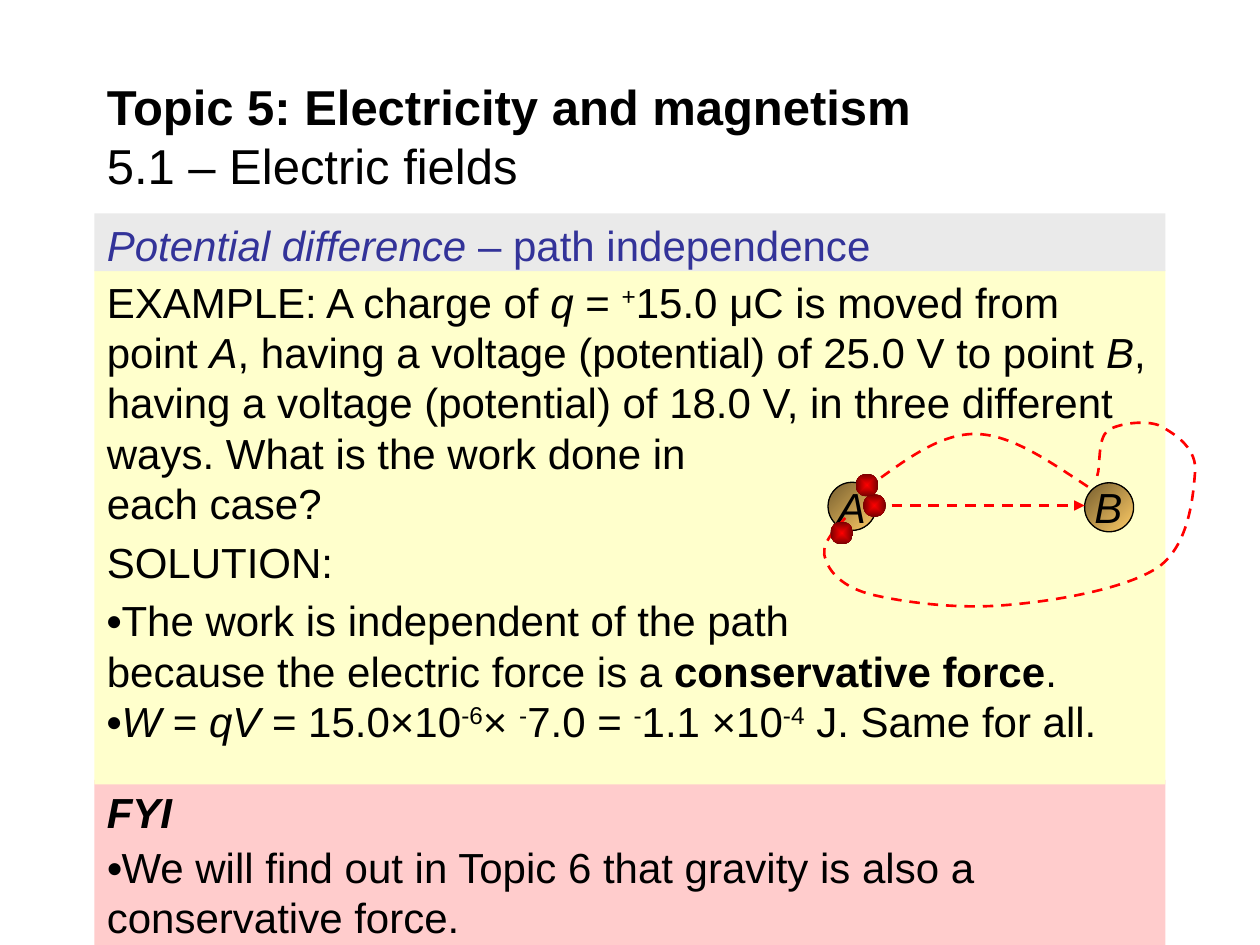
from lxml.etree import SubElement
from pptx import Presentation
from pptx.dml.color import RGBColor
from pptx.enum.dml import MSO_LINE
from pptx.enum.shapes import MSO_CONNECTOR, MSO_SHAPE
from pptx.enum.text import MSO_ANCHOR, PP_ALIGN
from pptx.oxml.ns import qn
from pptx.util import Pt

COLORS = {
    "text": "000000", "heading": "333399", "band": "EAEAEA",
    "example": "FFFFCC", "fyi": "FFCCCC", "path": "FF0000",
    "point_dark": "765E2F", "point_light": "FFCC66", "charge_dark": "760000",
}

# Run marks: b = bold, i = italic, ^ = superscript
TITLE = [[("Topic 5: Electricity and magnetism\n", "b"), ("5.1 – Electric fields", "")]]
HEADING = [[("Potential difference ", "i"), ("– path independence", "")]]
EXAMPLE = [
    [("EXAMPLE: A charge of ", ""), ("q", "i"), (" = ", ""), ("+", "^"),
     ("15.0 μC is moved from point ", ""), ("A", "i"),
     (", having a voltage (potential) of 25.0 V to point ", ""), ("B", "i"),
     (", having a voltage (potential) of 18.0 V, in three different ways. "
      "What is the work done in\neach case?", "")],
    [("SOLUTION:", "")],
    [("•", "b"), ("The work is independent of the path\nbecause the electric force is a ", ""),
     ("conservative force", "b"), (".", "")],
    [("•", "b"), ("W", "i"), (" = ", ""), ("qV", "i"), (" = 15.0×10", ""), ("-6", "^"),
     ("× ", ""), ("-", "^"), ("7.0 = ", ""), ("-", "^"), ("1.1 ×10", ""), ("-4", "^"),
     (" J. Same for all.", "")],
]
FYI = [
    [("FYI", "bi")],
    [("•", "bi"), ("We will find out in Topic 6 that gravity is also a conservative force.", "")],
]

LEFT, WIDTH = 54, 612
# top, height, fill, text colour, paragraphs, space before each paragraph
PANELS = [
    (445.7, 94.3, "fyi", "text", FYI, (2.4, 2.6)),
    (154.3, 294, "example", "text", EXAMPLE, (4.6, 4.6, 4.6, 0)),
    (122, 33, "band", "heading", HEADING, (0,)),
]
# label, left, top, diameter
POINTS = [("A", 473.2, 275.6, 27.5), ("B", 619.8, 275.9, 28)]
LABEL_SIZE = (30, 36)
CHARGE_DIAMETER = 13
STRAIGHT_PATH = [(499, 288.9), (619.8, 288.9)]
# Start point, then two control points and an end point per curve
UPPER_PATH = [(494.6, 278.6),
              (515.5, 263.5), (535.7, 248.2), (557.3, 248.2),
              (578.2, 248.2), (600.5, 263.5), (622.8, 279.4)]
LOOP_PATH = [(483, 296),
             (476, 304.5), (468.5, 312.5), (471.5, 320),
             (474.5, 327), (482.5, 335.5), (499, 340),
             (515.5, 344), (545, 348.5), (572.5, 346),
             (600, 343.5), (643, 337), (661.5, 324),
             (679.5, 311), (682.5, 281.5), (683.3, 268),
             (683.3, 255), (670.3, 247), (662.4, 243.4),
             (653.8, 239.8), (638.6, 242), (633, 246.2),
             (627, 251.3), (628.6, 266.4), (627, 272.2)]
UPPER_CHARGE, MIDDLE_CHARGE, LOWER_CHARGE = (495.4, 277.2), (499.7, 288.9), (481, 304.6)


def rgb(name):
    return RGBColor.from_string(COLORS[name])


def write(shape, paragraphs, size, color, spaces=(0,), wrap=True, **layout):
    frame = shape.text_frame
    settings = {"word_wrap": wrap, "vertical_anchor": MSO_ANCHOR.TOP, **layout}
    for name, value in settings.items():
        setattr(frame, name, value)
    for number, (runs, space) in enumerate(zip(paragraphs, spaces)):
        paragraph = frame.add_paragraph() if number else frame.paragraphs[0]
        paragraph.alignment = PP_ALIGN.LEFT
        paragraph.space_before = Pt(space)
        for text, marks in runs:
            for part, line in enumerate(text.split("\n")):
                if part:
                    paragraph.add_line_break()
                if not line:
                    continue
                font_format = {"name": "Arial", "size": Pt(size),
                               "bold": "b" in marks, "italic": "i" in marks}
                run = paragraph.add_run()
                run.text = line
                for name, value in font_format.items():
                    setattr(run.font, name, value)
                run.font.color.rgb = rgb(color)
                if "^" in marks:
                    run.font._element.set("baseline", "30000")


def add_shape(parent, kind, left, top, width, height):
    shape = parent.shapes.add_shape(kind, Pt(left), Pt(top), Pt(width), Pt(height))
    shape.shadow.inherit = False
    shape.line.fill.background()
    return shape


def add_text_box(parent, left, top, width, height):
    return parent.shapes.add_textbox(Pt(left), Pt(top), Pt(width), Pt(height))


def fill_gradient(shape, *colors):
    shape.fill.gradient()
    for position, (stop, color) in enumerate(zip(shape.fill.gradient_stops, colors)):
        stop.color.rgb = rgb(color)
        stop.position = position


def style_path(line):
    line.color.rgb = rgb("path")
    line.width = Pt(1.5)
    line.dash_style = MSO_LINE.DASH


def add_curve(slide, points):
    """Draw a chain of cubic Bézier curves as a dashed outline."""
    builder = slide.shapes.build_freeform(*points[0], scale=float(Pt(1)))
    builder.add_line_segments(points[1:], close=False)
    curve = builder.convert_to_shape()
    outline = next(curve._element.iter(qn("a:path")))
    segments = outline.findall(qn("a:lnTo"))
    for first in range(0, len(segments), 3):
        bezier = SubElement(outline, qn("a:cubicBezTo"))
        for segment in segments[first:first + 3]:
            bezier.append(segment[0])
            outline.remove(segment)
    curve.shadow.inherit = False
    curve.fill.background()
    style_path(curve.line)


def add_arrow(slide, start, end):
    arrow = slide.shapes.add_connector(MSO_CONNECTOR.STRAIGHT, *map(Pt, start + end))
    style_path(arrow.line)
    SubElement(arrow.line._get_or_add_ln(), qn("a:tailEnd"), type="triangle")
    SubElement(arrow._element.spPr, qn("a:effectLst"))


def add_charge(slide, center):
    left, top = (value - CHARGE_DIAMETER / 2 for value in center)
    charge = add_shape(slide, MSO_SHAPE.OVAL, left, top, CHARGE_DIAMETER, CHARGE_DIAMETER)
    fill_gradient(charge, "path", "charge_dark")
    gradient = charge._element.spPr.find(qn("a:gradFill"))
    gradient.remove(gradient.find(qn("a:lin")))
    radial = SubElement(gradient, qn("a:path"), path="shape")
    SubElement(radial, qn("a:fillToRect"), l="50000", t="50000", r="50000", b="50000")


def add_point(slide, label, left, top, diameter):
    group = slide.shapes.add_group_shape()
    point = add_shape(group, MSO_SHAPE.OVAL, left, top, diameter, diameter)
    fill_gradient(point, "point_dark", "point_light")
    point.fill.gradient_angle = 315
    point.line.color.rgb = rgb("text")
    point.line.width = Pt(0.75)
    box = add_text_box(group, left - 1.5, top - 4, *LABEL_SIZE)
    write(box, [[(label, "i")]], 24, "text", wrap=False)


def main():
    deck = Presentation()
    deck.slide_width, deck.slide_height = Pt(720), Pt(540)
    slide = deck.slides.add_slide(deck.slide_layouts[6])
    for top, height, fill, color, paragraphs, spaces in PANELS:
        panel = add_shape(slide, MSO_SHAPE.RECTANGLE, LEFT, top, WIDTH, height)
        panel.fill.solid()
        panel.fill.fore_color.rgb = rgb(fill)
        write(panel, paragraphs, 24, color, spaces)
    title = add_text_box(slide, LEFT, 42, WIDTH, 70.6)
    write(title, TITLE, 28, "text", vertical_anchor=MSO_ANCHOR.MIDDLE)
    for point in POINTS:
        add_point(slide, *point)
    add_arrow(slide, *STRAIGHT_PATH)
    add_charge(slide, MIDDLE_CHARGE)
    for curve, charge in ((UPPER_PATH, UPPER_CHARGE), (LOOP_PATH, LOWER_CHARGE)):
        add_curve(slide, curve)
        add_charge(slide, charge)
    deck.save("out.pptx")


if __name__ == "__main__":
    main()
